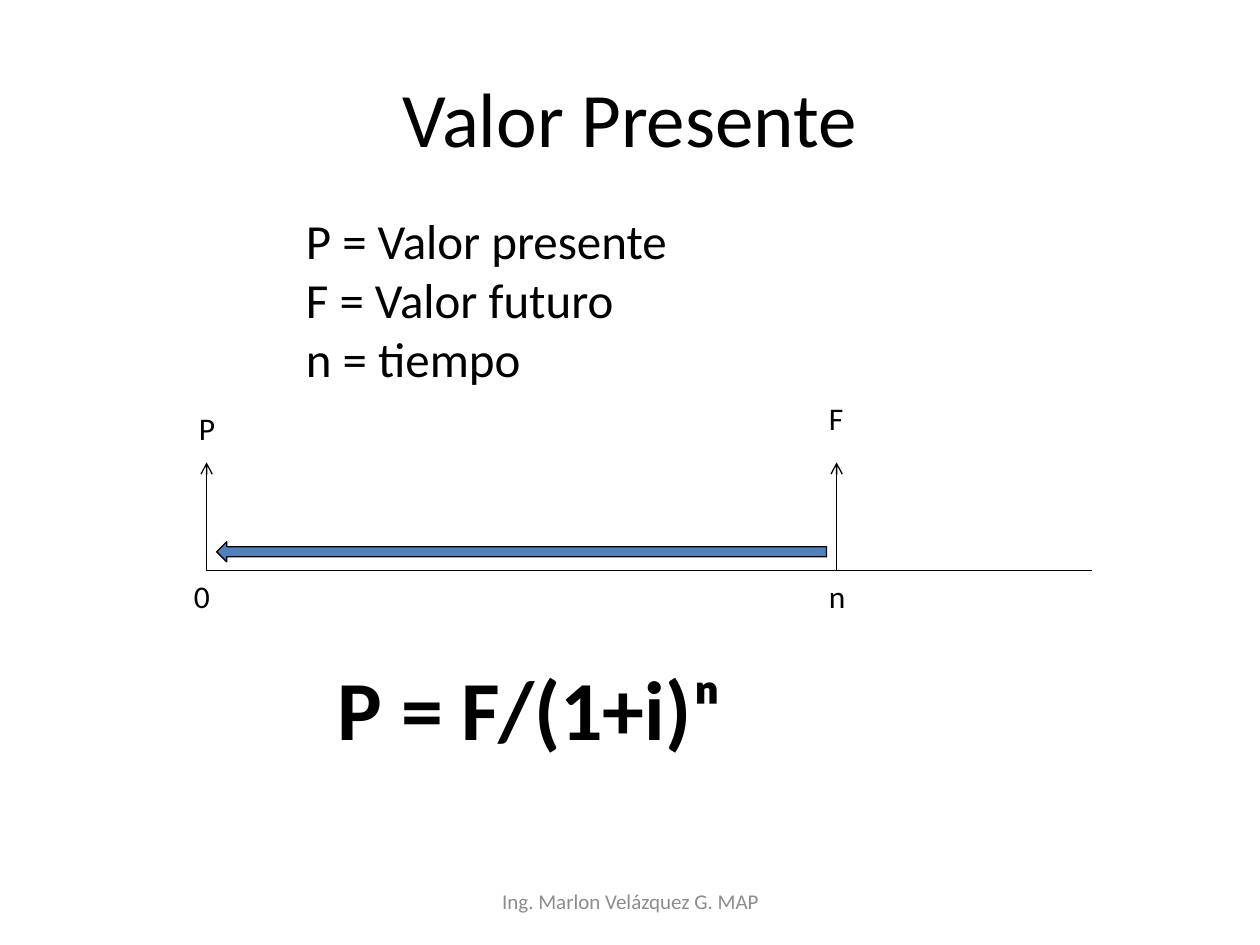
from lxml import etree
from pptx import Presentation
from pptx.dml.color import RGBColor
from pptx.enum.shapes import MSO_CONNECTOR, MSO_SHAPE
from pptx.enum.text import MSO_ANCHOR, PP_ALIGN
from pptx.oxml.ns import qn
from pptx.util import Inches, Pt

LEFT, CENTER = PP_ALIGN.LEFT, PP_ALIGN.CENTER
TOP, MIDDLE = MSO_ANCHOR.TOP, MSO_ANCHOR.MIDDLE
STRAIGHT = MSO_CONNECTOR.STRAIGHT
LEFT_ARROW = MSO_SHAPE.LEFT_ARROW

WIDTH, HEIGHT = 10, 7.5
FONT = "Calibri"
COLORS = {"ink": "000000", "arrow": "4F81BD", "footer": "8C8C8C"}


def color(name):
    """Return the named colour."""
    return RGBColor.from_string(COLORS[name])


def add_text(page, box, lines, size, ink="ink", bold=False, align=LEFT, anchor=TOP, wrap=True):
    """Write lines of text in a box of left, top, width and height."""
    frame = page.shapes.add_textbox(*map(Inches, box)).text_frame
    frame.word_wrap = wrap
    frame.vertical_anchor = anchor
    frame.text = "\n".join(lines)
    for para in frame.paragraphs:
        para.alignment = align
        for span in para.runs:
            span.font.name = FONT
            span.font.size = Pt(size)
            span.font.bold = bold
            span.font.color.rgb = color(ink)


def add_line(page, start, end, arrow=False):
    """Draw a thin line, with an open arrowhead at its end if asked."""
    line = page.shapes.add_connector(STRAIGHT, *map(Inches, start + end))
    line.line.color.rgb = color("ink")
    line.line.width = Pt(0.75)
    if arrow:
        etree.SubElement(line.line._get_or_add_ln(), qn("a:tailEnd"), type="arrow")
    etree.SubElement(line._element.spPr, qn("a:effectLst"))


def add_timeline(page, box):
    """Draw the time axis with both cash flows and the discounting arrow."""
    left, top, width, height = box
    base = top + height
    future = left + 5
    add_line(page, (left, base), (left + width, base))
    flows = [(left, "P", 0.47, "0", -0.2), (future, "F", 0.55, "n", -0.16)]
    for x, value, rise, period, shift in flows:
        add_line(page, (x, base), (x, top), arrow=True)
        add_text(page, (x - 0.16, top - rise, 0.5, 0.4), [value], 18)
        add_text(page, (x + shift, base, 0.36, 0.4), [period], 18, wrap=False)
    gap, thickness = 0.08, 0.16
    span = (left + gap, base - 0.23, future - left - 2 * gap, thickness)
    arrow = page.shapes.add_shape(LEFT_ARROW, *map(Inches, span))
    arrow.shadow.inherit = False
    arrow.fill.solid()
    arrow.fill.fore_color.rgb = color("arrow")
    arrow.line.color.rgb = color("ink")
    arrow.line.width = Pt(0.75)


def build_page(page):
    """Place the title, definitions, timeline, formula and footer."""
    margin = WIDTH * 0.05
    title = (margin, HEIGHT * 0.04, WIDTH - 2 * margin, 1.25)
    add_text(page, title, ["Valor Presente"], 44, align=CENTER, anchor=MIDDLE)
    definitions = ["P = Valor presente", "F = Valor futuro", "n = tiempo"]
    add_text(page, (2.33, 1.62, 4.22, 1.51), definitions, 28)
    add_timeline(page, (1.64, 3.67, 7.03, 0.86))
    add_text(page, (2.58, 5.16, 3.83, 0.91), ["P = F/(1+i)ⁿ"], 48, bold=True)
    footer = (3.42, 6.95, 3.17, 0.4)
    add_text(page, footer, ["Ing. Marlon Velázquez G. MAP"], 12, "footer", align=CENTER, anchor=MIDDLE)


def main():
    """Build the deck and save it."""
    deck = Presentation()
    deck.slide_width, deck.slide_height = Inches(WIDTH), Inches(HEIGHT)
    build_page(deck.slides.add_slide(deck.slide_layouts[6]))
    deck.save("out.pptx")


if __name__ == "__main__":
    main()
